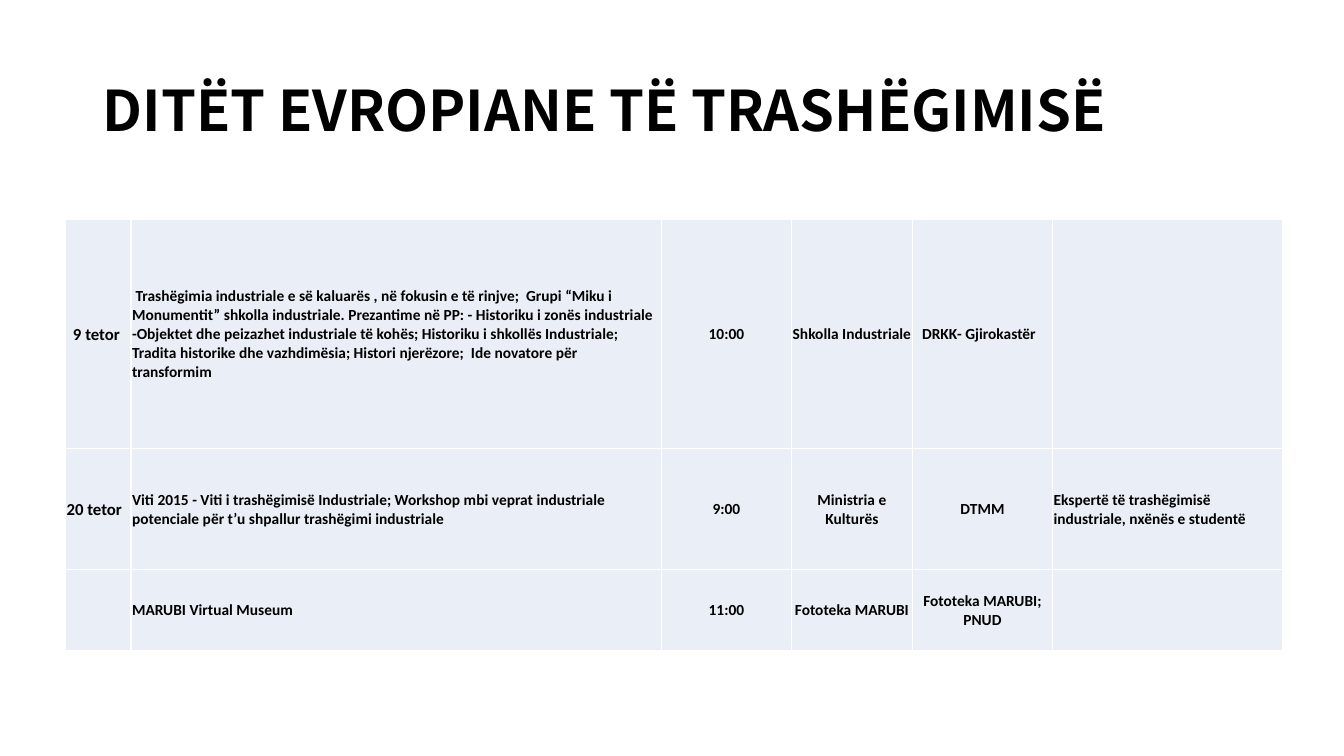
import lxml.etree
import pptx
import pptx.dml.color
import pptx.enum.text
import pptx.oxml.ns
import pptx.util

Inches = pptx.util.Inches
ALIGN = pptx.enum.text.PP_ALIGN
MIDDLE = pptx.enum.text.MSO_ANCHOR.MIDDLE
COLORS = {"text": "000000", "cell": "EAEFF7", "border": "FFFFFF"}
COLUMN_WIDTHS = [0.65, 5.26, 1.29, 1.2, 1.39, 2.28]
ROW_HEIGHTS = [2.27, 1.2, 0.8]
LEFT_COLUMNS = {1, 5}
EVENTS = [
    ["9 tetor ",
     " Trashëgimia industriale e së kaluarës , në fokusin e të rinjve;  "
     "Grupi “Miku i Monumentit” shkolla industriale. Prezantime në PP: - "
     "Historiku i zonës industriale -Objektet dhe peizazhet industriale të kohës; "
     "Historiku i shkollës Industriale; Tradita historike dhe vazhdimësia; "
     "Histori njerëzore;  Ide novatore për transformim",
     "10:00", "Shkolla Industriale", "DRKK- Gjirokastër  ", ""],
    ["20 tetor",
     "Viti 2015 - Viti i trashëgimisë Industriale; Workshop mbi veprat industriale "
     "potenciale për t’u shpallur trashëgimi industriale",
     "9:00", "Ministria e Kulturës", "DTMM",
     "Ekspertë të trashëgimisë industriale, nxënës e studentë"],
    ["", "MARUBI Virtual Museum", "11:00", "Fototeka MARUBI", "Fototeka MARUBI; PNUD", ""],
]


class SlideBuilder:
    """Holds the style and the current slide, and adds elements to it."""

    def __init__(self, page, colors):
        self.page = page
        self.colors = colors

    def color(self, name):
        return pptx.dml.color.RGBColor.from_string(self.colors[name])

    def add_text(self, frame, text, *, size, font="Calibri", align=ALIGN.LEFT, spacing=1.0):
        para = frame.paragraphs[0]
        para.alignment = align
        para.line_spacing = spacing
        span = para.add_run()
        span.text = text
        span.font.name = font
        span.font.size = pptx.util.Pt(size)
        span.font.bold = True
        span.font.color.rgb = self.color("text")

    def title(self, text, left, top, width, height):
        box = self.page.shapes.title
        box.left, box.top = Inches(left), Inches(top)
        box.width, box.height = Inches(width), Inches(height)
        frame = box.text_frame
        frame.word_wrap = True
        frame.auto_size = pptx.enum.text.MSO_AUTO_SIZE.NONE
        frame.vertical_anchor = MIDDLE
        self.add_text(frame, text, size=40, font="Noto Sans CJK KR", spacing=0.9)

    def borders(self, cell):
        properties = cell._tc.get_or_add_tcPr()
        qn = pptx.oxml.ns.qn
        for side in ("L", "R", "T", "B"):
            line = lxml.etree.SubElement(properties, qn(f"a:ln{side}"), w=str(pptx.util.Pt(1)))
            fill = lxml.etree.SubElement(line, qn("a:solidFill"))
            lxml.etree.SubElement(fill, qn("a:srgbClr"), val=self.colors["border"])

    def cell(self, cell, text, **style):
        self.borders(cell)
        cell.fill.solid()
        cell.fill.fore_color.rgb = self.color("cell")
        cell.vertical_anchor = MIDDLE
        cell.margin_left = cell.margin_right = cell.margin_top = Inches(0.01)
        cell.margin_bottom = Inches(0)
        if text:
            self.add_text(cell.text_frame, text, **style)

    def table(self, rows, left, top):
        table = self.page.shapes.add_table(
            len(rows), len(COLUMN_WIDTHS), Inches(left), Inches(top),
            Inches(sum(COLUMN_WIDTHS)), Inches(sum(ROW_HEIGHTS))).table
        table.first_row = table.horz_banding = False
        for column, width in zip(table.columns, COLUMN_WIDTHS):
            column.width = Inches(width)
        for row, height in zip(table.rows, ROW_HEIGHTS):
            row.height = Inches(height)
        for row_index, row in enumerate(rows):
            for column_index, text in enumerate(row):
                is_left = column_index in LEFT_COLUMNS or text == "20 tetor"
                self.cell(table.cell(row_index, column_index), text,
                          size=12 if column_index == 0 else 11,
                          align=ALIGN.LEFT if is_left else ALIGN.CENTER)


def main():
    deck = pptx.Presentation()
    deck.slide_width, deck.slide_height = Inches(13.33), Inches(7.5)
    page = deck.slides.add_slide(deck.slide_layouts.get_by_name("Title Only"))
    builder = SlideBuilder(page, COLORS)
    builder.title("DITËT EVROPIANE TË TRASHËGIMISË", 0.92, 0.4, 11.5, 1.45)
    builder.table(EVENTS, 0.65, 2.18)
    deck.save("out.pptx")


if __name__ == "__main__":
    main()
